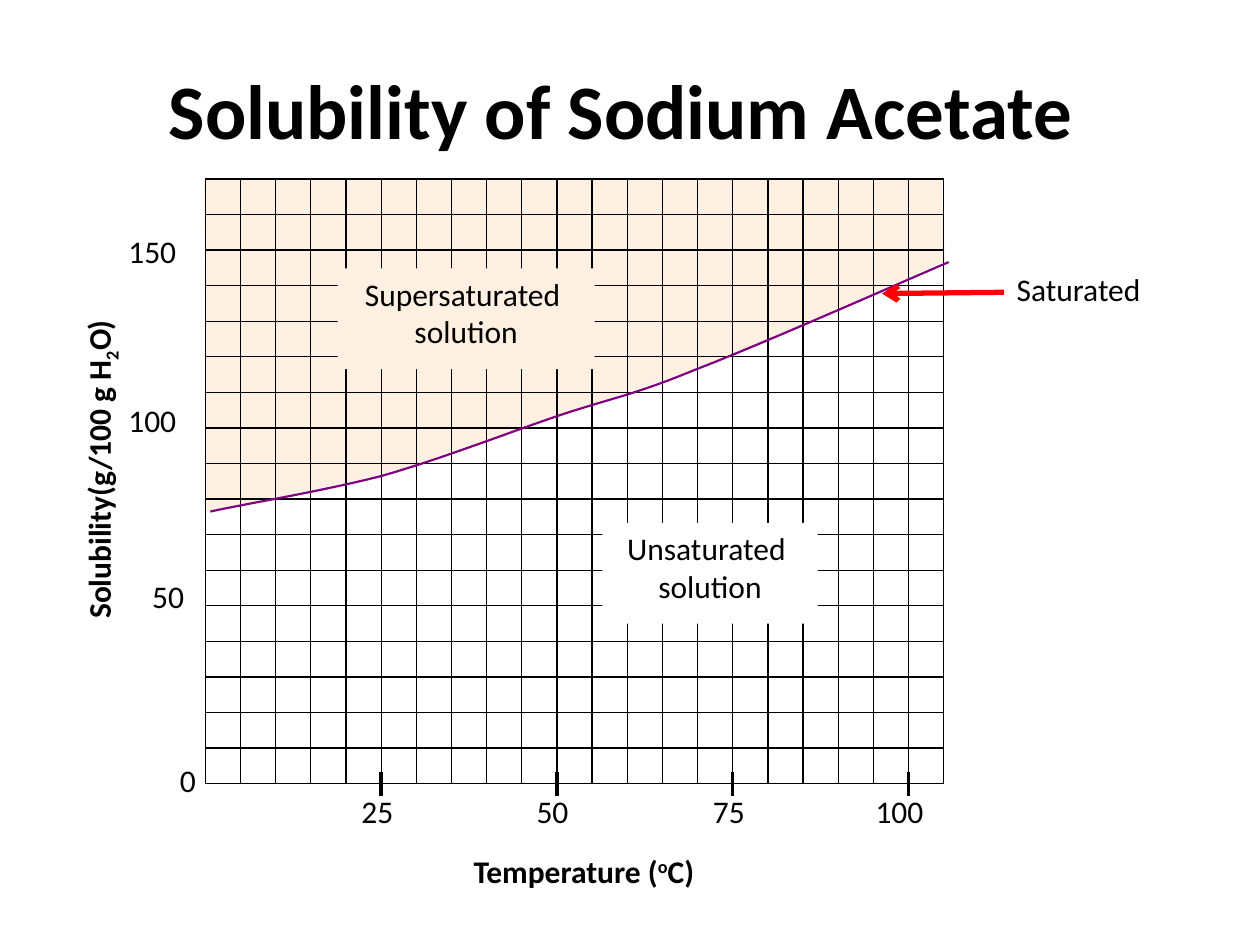
from dataclasses import dataclass

from pptx import Presentation
from pptx.dml.color import RGBColor
from pptx.enum.shapes import MSO_CONNECTOR as Connector, MSO_SHAPE as Preset
from pptx.enum.text import MSO_ANCHOR as Anchor, MSO_AUTO_SIZE as AutoSize, PP_ALIGN as Align
from pptx.oxml.ns import qn
from pptx.util import Inches, Pt
from lxml.etree import SubElement

Point = tuple[float, float]


@dataclass(frozen=True)
class Theme:
    font: str = "Calibri"
    title_size: Pt = Pt(44)
    label_size: Pt = Pt(18)
    ink: RGBColor = RGBColor(0, 0, 0)
    paper: RGBColor = RGBColor(255, 255, 255)
    supersaturated: RGBColor = RGBColor(0xFF, 0xF0, 0xE1)
    curve: RGBColor = RGBColor(0x80, 0, 0x80)
    pointer: RGBColor = RGBColor(0xFF, 0, 0)
    grid_width: Pt = Pt(0.75)
    curve_width: Pt = Pt(1.25)
    tick_width: Pt = Pt(2)
    pointer_width: Pt = Pt(3)


@dataclass(frozen=True)
class Label:
    text: str
    left: float
    top: float
    width: float
    height: float = 0.46
    bold: bool = False
    rotation: float = 0
    script: str = ""
    baseline: int = 0
    tail: str = ""


@dataclass(frozen=True)
class Region:
    lines: tuple[str, ...]
    left: float
    top: float
    width: float
    fill: RGBColor


@dataclass(frozen=True)
class Grid:
    left: float = 1.63
    top: float = 1.42
    right: float = 7.49
    bottom: float = 6.22
    columns: int = 21
    rows: int = 17

    def x(self, column: int) -> float:
        return self.left + (self.right - self.left) * column / self.columns

    def y(self, row: int) -> float:
        return self.top + (self.bottom - self.top) * row / self.rows


THEME = Theme()
GRID = Grid()

TICK_COLUMNS = (5, 10, 15, 20)
TEMPERATURES = (
    Label("25", 2.77, 6.24, 0.51),
    Label("50", 4.16, 6.24, 0.51),
    Label("75", 5.56, 6.24, 0.51),
    Label("100", 6.85, 6.24, 0.65),
)
SOLUBILITIES = (
    Label("0", 1.33, 5.99, 0.38),
    Label("50", 1.11, 4.53, 0.51),
    Label("100", 0.92, 3.13, 0.65),
    Label("150", 0.92, 1.79, 0.65),
)
AXIS_TITLES = (
    Label("Temperature (", 3.66, 6.71, 1.98, 0.4, True, 0, "o", 30000, "C)"),
    Label("Solubility(g/100 g H", -0.67, 3.31, 2.95, 0.45, True, 270, "2", -25000, "O)"),
)
REGIONS = (
    Region(("Supersaturated ", "solution"), 2.68, 2.13, 2.04, THEME.supersaturated),
    Region(("Unsaturated ", "solution"), 4.78, 4.15, 1.71, THEME.paper),
)
SUPERSATURATED_AREA = (
    (1.67, 1.42), (7.47, 1.42), (7.5, 2.07), (6.08, 2.7), (5.43, 2.96),
    (3.72, 3.54), (3.25, 3.7), (2.87, 3.8), (1.64, 4.07), (1.62, 1.42),
)
CURVE_START = (1.67, 4.06)
CURVE_SEGMENTS = (
    ((1.89, 4.01), (2.55, 3.9), (3.02, 3.78)),
    ((3.48, 3.65), (4.02, 3.44), (4.43, 3.3)),
    ((4.85, 3.16), (5.02, 3.14), (5.53, 2.93)),
    ((6.05, 2.73), (7.11, 2.26), (7.53, 2.08)),
)


def style(paragraph, size=THEME.label_size, bold: bool = False) -> None:
    paragraph.font.name = THEME.font
    paragraph.font.size = size
    paragraph.font.bold = bold
    paragraph.font.color.rgb = THEME.ink


def draw_line(slide, start: Point, end: Point, color: RGBColor, width: Pt):
    line = slide.shapes.add_connector(Connector.STRAIGHT, *map(Inches, start + end))
    line.line.color.rgb = color
    line.line.width = width
    SubElement(line._element.spPr, qn("a:effectLst"))
    return line


def draw_label(slide, label: Label):
    box = slide.shapes.add_textbox(
        *map(Inches, (label.left, label.top, label.width, label.height)))
    box.rotation = label.rotation
    box.text_frame.word_wrap = False
    box.text_frame.auto_size = AutoSize.SHAPE_TO_FIT_TEXT
    paragraph = box.text_frame.paragraphs[0]
    paragraph.add_run().text = label.text
    if label.script:
        script = paragraph.add_run()
        script.text = label.script
        script.font._element.set("baseline", str(label.baseline))
        paragraph.add_run().text = label.tail
    style(paragraph, bold=label.bold)
    return box


def draw_region(slide, region: Region) -> None:
    box = slide.shapes.add_shape(
        Preset.RECTANGLE, *map(Inches, (region.left, region.top, region.width, 0.8)))
    box.shadow.inherit = False
    box.fill.solid()
    box.fill.fore_color.rgb = region.fill
    box.line.fill.background()
    frame = box.text_frame
    frame.word_wrap = False
    frame.auto_size = AutoSize.SHAPE_TO_FIT_TEXT
    frame.vertical_anchor = Anchor.TOP
    frame.text = "\n".join(region.lines)
    for paragraph in frame.paragraphs:
        paragraph.alignment = Align.CENTER
        style(paragraph)


def draw_outline(slide, points: list[Point], closed: bool):
    builder = slide.shapes.build_freeform(*points[0], scale=Inches(1) * 1.0)
    builder = slide.shapes.build_freeform(
        *map(Inches, points[0]), scale=1.0)
    builder.add_line_segments([tuple(map(Inches, p)) for p in points[1:]], close=closed)
    outline = builder.convert_to_shape()
    outline.shadow.inherit = False
    return outline


def curve_points(steps: int = 12) -> list[Point]:
    points = [CURVE_START]
    for first, second, end in CURVE_SEGMENTS:
        start = points[-1]
        for step in range(1, steps + 1):
            t = step / steps
            u = 1 - t
            points.append(tuple(
                u**3 * a + 3 * u * u * t * b + 3 * u * t * t * c + t**3 * d
                for a, b, c, d in zip(start, first, second, end)))
    return points


def draw_grid(slide) -> None:
    for column in range(GRID.columns + 1):
        x = GRID.x(column)
        draw_line(slide, (x, GRID.top), (x, GRID.bottom), THEME.ink, THEME.grid_width)
    for row in range(GRID.rows + 1):
        y = GRID.y(row)
        draw_line(slide, (GRID.left, y), (GRID.right, y), THEME.ink, THEME.grid_width)


def main() -> None:
    deck = Presentation()
    deck.slide_width, deck.slide_height = Inches(10), Inches(7.5)
    slide = deck.slides.add_slide(deck.slide_layouts[5])

    title = slide.shapes.title
    title.left, title.top, title.width, title.height = map(Inches, (0.68, 0.32, 8.5, 1.08))
    title.text_frame.text = "Solubility of Sodium Acetate"
    title.text_frame.vertical_anchor = Anchor.MIDDLE
    title.text_frame.paragraphs[0].alignment = Align.CENTER
    style(title.text_frame.paragraphs[0], THEME.title_size, True)

    area = draw_outline(slide, SUPERSATURATED_AREA, True)
    area.fill.solid()
    area.fill.fore_color.rgb = THEME.supersaturated
    area.line.fill.background()

    draw_grid(slide)
    for column in TICK_COLUMNS:
        x = GRID.x(column)
        draw_line(slide, (x, 6.32), (x, 6.13), THEME.ink, THEME.tick_width)
    for label in TEMPERATURES + SOLUBILITIES + AXIS_TITLES:
        draw_label(slide, label)

    curve = draw_outline(slide, curve_points(), False)
    curve.fill.background()
    curve.line.color.rgb = THEME.curve
    curve.line.width = THEME.curve_width

    for region in REGIONS:
        draw_region(slide, region)

    saturated = draw_label(slide, Label("Saturated", 7.97, 2.09, 1.33))
    pointer = draw_line(slide, (7.97, 2.32), (7, 2.33), THEME.pointer, THEME.pointer_width)
    pointer.begin_connect(saturated, 1)
    SubElement(pointer.line._get_or_add_ln(), qn("a:tailEnd"), type="arrow")

    deck.save("out.pptx")


if __name__ == "__main__":
    main()
